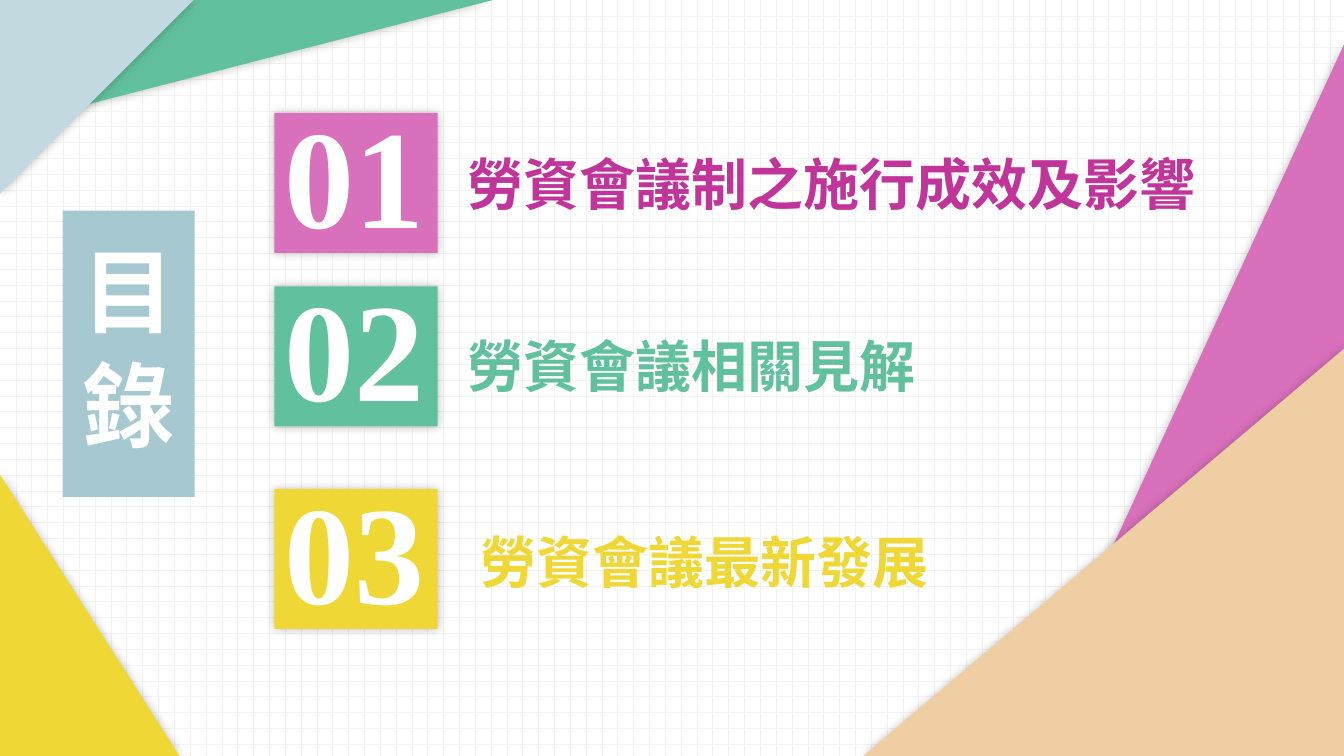
from lxml import etree
from pptx import Presentation
from pptx.dml.color import RGBColor
from pptx.enum.dml import MSO_PATTERN
from pptx.enum.shapes import MSO_SHAPE
from pptx.enum.text import MSO_ANCHOR, PP_ALIGN
from pptx.oxml.ns import qn
from pptx.util import Inches, Pt

RECT, TRIANGLE = MSO_SHAPE.RECTANGLE, MSO_SHAPE.RIGHT_TRIANGLE
DOT_GRID = MSO_PATTERN.DOTTED_GRID
TOP, MIDDLE = MSO_ANCHOR.TOP, MSO_ANCHOR.MIDDLE
LEFT, CENTER = PP_ALIGN.LEFT, PP_ALIGN.CENTER

SLIDE_W, SLIDE_H = 13.33, 7.5
CJK, SERIF = "Noto Sans CJK SC", "Times New Roman"
COLORS = {
    "white": "FFFFFF", "grid": "F2F2F2", "green": "61C09E", "pink": "D870BB",
    "magenta": "C1359A", "pale": "C1D9DF", "blue": "A6C8D1",
    "peach": "F0CEA3", "yellow": "EFD836",
}

# Number tiles share one column; headings sit to their right
TILE_X, TILE_W, TILE_H = 2.72, 1.62, 1.39
HEADING_W = 7.57

# Rotation that brings the right angle into each slide corner
CORNER_ROTATION = {"bottom left": 0, "top left": 90, "bottom right": 270}

# Corner, width, height, colour; from back to front
TRIANGLES = [
    ("top left", 4.89, 1.26, "green"),
    ("bottom right", 3.25, 7.06, "pink"),
    ("top left", 1.92, 1.92, "pale"),
    ("bottom right", 4.77, 4.04, "peach"),
    ("bottom left", 1.78, 2.79, "yellow"),
]

# Tile top, tile colour, heading, heading box, heading colour, line spacing
ITEMS = [
    (1.12, "pink", "勞資會議制之施行成效及影響", (4.54, 1.51, HEADING_W, 0.58), "magenta", 0.9),
    (2.84, "green", "勞資會議相關見解", (4.54, 3.24, HEADING_W, 0.82), "green", 1.0),
    (4.85, "yellow", "勞資會議最新發展", (4.67, 5.18, HEADING_W, 0.58), "yellow", 1.0),
]


def rgb(name):
    return RGBColor.from_string(COLORS[name])


def add_soft_shadow(sp):
    effects = sp._element.spPr.find(qn("a:effectLst"))
    shadow = etree.SubElement(effects, qn("a:outerShdw"), blurRad=str(Pt(7)),
                              dist="0", dir="0", algn="ctr", rotWithShape="0")
    color = etree.SubElement(shadow, qn("a:srgbClr"), val="000000")
    etree.SubElement(color, qn("a:alpha"), val="25000")


def add_block(s, kind, box, color, shadow=True):
    sp = s.shapes.add_shape(kind, *map(Inches, box))
    sp.fill.solid()
    sp.fill.fore_color.rgb = rgb(color)
    sp.line.fill.background()
    sp.shadow.inherit = False
    if shadow:
        add_soft_shadow(sp)
    return sp


def add_corner_triangle(s, corner, width, height, color):
    center_x = width / 2 if "left" in corner else SLIDE_W - width / 2
    center_y = height / 2 if "top" in corner else SLIDE_H - height / 2
    rotation = CORNER_ROTATION[corner]
    w, h = (height, width) if rotation else (width, height)
    sp = add_block(s, TRIANGLE, (center_x - w / 2, center_y - h / 2, w, h), color)
    sp.rotation = rotation


def set_text(sp, text, size, font, color, align=LEFT, anchor=TOP, spacing=0.9):
    tf = sp.text_frame
    tf.word_wrap = True
    tf.vertical_anchor = anchor
    tf.text = text
    for p in tf.paragraphs:
        p.alignment = align
        p.line_spacing = spacing
        p.space_before = Pt(10)
        for r in p.runs:
            r.font.size = Pt(size)
            r.font.bold = True
            r.font.name = font
            r.font.color.rgb = rgb(color)
            etree.SubElement(r.font._element, qn("a:ea"), typeface=font)


def add_item(s, number, top, tile_color, heading, box, heading_color, spacing):
    tile = add_block(s, RECT, (TILE_X, top, TILE_W, TILE_H), tile_color)
    set_text(tile, f"{number:02d}", 100, SERIF, "white", anchor=MIDDLE)
    label = s.shapes.add_textbox(*map(Inches, box))
    set_text(label, heading, 40, CJK, heading_color, spacing=spacing)


def main():
    prs = Presentation()
    prs.slide_width, prs.slide_height = Inches(SLIDE_W), Inches(SLIDE_H)
    s = prs.slides.add_slide(prs.slide_layouts[6])

    # Dotted grid background
    fill = s.background.fill
    fill.patterned()
    fill.pattern = DOT_GRID
    fill.fore_color.rgb = rgb("grid")
    fill.back_color.rgb = rgb("white")

    # Corner decoration
    for triangle in TRIANGLES:
        add_corner_triangle(s, *triangle)

    # Title panel
    title = add_block(s, RECT, (0.62, 2.09, 1.31, 2.84), "blue", shadow=False)
    set_text(title, "目\n錄", 66, CJK, "white", CENTER, MIDDLE)

    # Contents
    for number, item in enumerate(ITEMS, 1):
        add_item(s, number, *item)

    prs.save("out.pptx")


if __name__ == "__main__":
    main()
